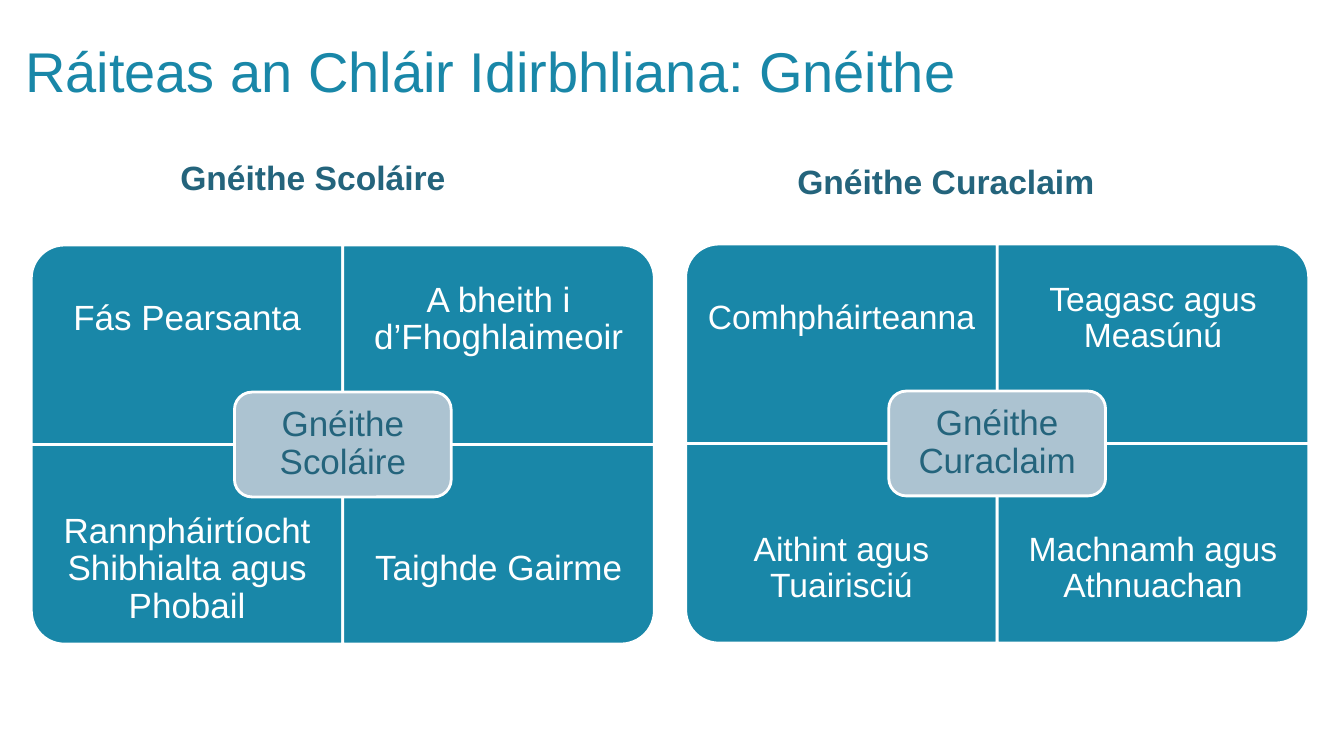
from pptx import Presentation
from pptx.dml.color import RGBColor
from pptx.enum.shapes import MSO_SHAPE
from pptx.enum.text import MSO_ANCHOR, PP_ALIGN
from pptx.util import Inches, Pt

ROUND_ONE = MSO_SHAPE.ROUND_1_RECTANGLE
ROUNDED = MSO_SHAPE.ROUNDED_RECTANGLE
TOP, MIDDLE, BOTTOM = MSO_ANCHOR.TOP, MSO_ANCHOR.MIDDLE, MSO_ANCHOR.BOTTOM
LEFT, CENTER = PP_ALIGN.LEFT, PP_ALIGN.CENTER

TITLE = "Ráiteas an Chláir Idirbhliana: Gnéithe"
# Quadrants run top left, top right, bottom left, bottom right
MATRICES = [
    {"name": "Gnéithe Curaclaim", "heading_at": (7.81, 1.55, 4.41, 0.5),
     "origin": (6.8, 2.42), "size": 24,
     "quadrants": ["Comhpháirteanna", "Teagasc agus Measúnú",
                   "Aithint agus Tuairisciú", "Machnamh agus Athnuachan"]},
    {"name": "Gnéithe Scoláire", "heading_at": (1.69, 1.51, 3.45, 0.5),
     "origin": (0.31, 2.43), "size": 25,
     "quadrants": ["Fás Pearsanta", "A bheith i d’Fhoghlaimeoir",
                   "Rannpháirtíocht Shibhialta agus Phobail", "Taighde Gairme"]},
]

THEME = {
    "font": "Arial",
    "teal": RGBColor.from_string("1987A8"),
    "dark": RGBColor.from_string("24647C"),
    "pale": RGBColor.from_string("ACC3D1"),
    "white": RGBColor.from_string("FFFFFF"),
    "title": 40, "heading": 24, "hub": 25, "line": 2,
}
CELL_W, CELL_H, LABEL_H = 3.09, 1.98, 1.48
HUB_W, HUB_H = 2.15, 1.04
ROTATIONS = [270, 0, 180, 90]


def write(sp, text, size, color, bold=False, align=CENTER, anchor=MIDDLE,
          inset=(0.19, 0.19), spacing=0.9):
    tf = sp.text_frame
    side, end = (Inches(v) for v in inset)
    frame = {"word_wrap": True, "vertical_anchor": anchor,
             "margin_left": side, "margin_right": side,
             "margin_top": end, "margin_bottom": end}
    for key, value in frame.items():
        setattr(tf, key, value)
    p = tf.paragraphs[0]
    p.alignment, p.line_spacing = align, spacing
    r = p.add_run()
    r.text = text
    for key, value in {"name": THEME["font"], "size": Pt(size), "bold": bold}.items():
        setattr(r.font, key, value)
    r.font.color.rgb = color


def add_text(shapes, box, text, size, color, **style):
    write(shapes.add_textbox(*map(Inches, box)), text, size, color, **style)


def add_block(shapes, kind, box, fill):
    sp = shapes.add_shape(kind, *map(Inches, box))
    sp.shadow.inherit = False
    sp.fill.solid()
    sp.fill.fore_color.rgb = fill
    sp.line.color.rgb = THEME["white"]
    sp.line.width = Pt(THEME["line"])
    return sp


def add_matrix(slide, matrix):
    """Four quadrants, rounded at the outer corners, around a central hub."""
    shapes = slide.shapes.add_group_shape().shapes
    x0, y0 = matrix["origin"]
    for i, text in enumerate(matrix["quadrants"]):
        row, col = divmod(i, 2)
        x, y = x0 + col * CELL_W, y0 + row * CELL_H
        # A quarter turn swaps the sides, about the same centre
        w, h = (CELL_H, CELL_W) if ROTATIONS[i] % 180 else (CELL_W, CELL_H)
        box = (x + (CELL_W - w) / 2, y + (CELL_H - h) / 2, w, h)
        add_block(shapes, ROUND_ONE, box, THEME["teal"]).rotation = ROTATIONS[i]
        label_y = y + row * (CELL_H - LABEL_H)
        add_text(shapes, (x, label_y, CELL_W, LABEL_H), text,
                 matrix["size"], THEME["white"])
    hub = add_block(shapes, ROUNDED, (x0 + CELL_W - HUB_W / 2, y0 + CELL_H - HUB_H / 2,
                                      HUB_W, HUB_H), THEME["pale"])
    write(hub, matrix["name"], THEME["hub"], THEME["dark"], inset=(0.1, 0.1))


def main():
    prs = Presentation()
    prs.slide_width, prs.slide_height = Inches(13.33), Inches(7.5)
    slide = prs.slides.add_slide(prs.slide_layouts[6])
    add_text(slide.shapes, (0.25, 0.28, 10.57, 0.76), TITLE, THEME["title"],
             THEME["teal"], align=LEFT, anchor=BOTTOM, inset=(0, 0))
    for matrix in MATRICES:
        add_text(slide.shapes, matrix["heading_at"], matrix["name"], THEME["heading"],
                 THEME["dark"], bold=True, align=LEFT, anchor=TOP,
                 inset=(0.1, 0.05), spacing=1.0)
        add_matrix(slide, matrix)
    prs.save("out.pptx")


if __name__ == "__main__":
    main()
